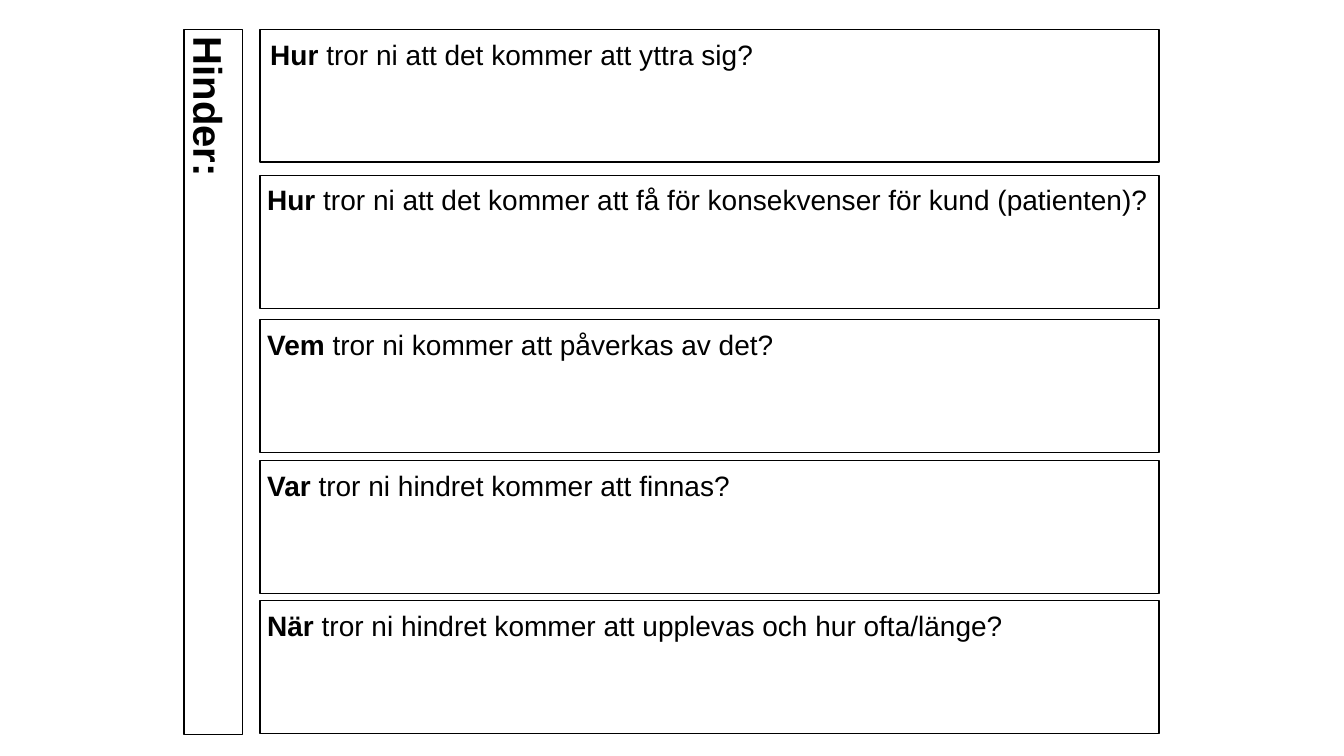
from lxml.etree import SubElement
from pptx import Presentation
from pptx.dml.color import RGBColor as RGB
from pptx.enum.shapes import MSO_SHAPE as SHAPE
from pptx.enum.text import MSO_ANCHOR as ANCHOR, MSO_AUTO_SIZE as AUTO, PP_ALIGN as ALIGN
from pptx.oxml.ns import qn
from pptx.util import Pt

INK = {"black": "000000", "white": "FFFFFF"}
LEFT, WIDE, HIGH = 185.8, 642.2, 95
ASKS = [
    (20.9, "Hur", " tror ni att det kommer att yttra sig?"),
    (125.3, "Hur", " tror ni att det kommer att få för konsekvenser för kund (patienten)?"),
    (228.2, "Vem", " tror ni kommer att påverkas av det?"),
    (329, "Var", " tror ni hindret kommer att finnas?"),
    (429.1, "När ", "tror ni hindret kommer att upplevas och hur ofta/länge?"),
]


def color(name):
    """Return a palette color."""
    return RGB.from_string(INK[name])


def frame(shape, x, y, w, h):
    """Place a shape as a white box with a thin black border."""
    shape.left, shape.top, shape.width, shape.height = map(Pt, (x, y, w, h))
    shape.fill.solid()
    shape.fill.fore_color.rgb = color("white")
    shape.line.color.rgb = color("black")
    shape.line.width = Pt(1)


def write(shape, bold, plain="", size=20, inset=(5, 3)):
    """Write a bold lead and a plain rest at the top left of a shape."""
    body = shape.text_frame
    body.word_wrap = True
    body.auto_size = AUTO.NONE
    body.vertical_anchor = ANCHOR.TOP
    body.margin_left = body.margin_right = Pt(inset[0])
    body.margin_top = body.margin_bottom = Pt(inset[1])
    line = body.paragraphs[0]
    props = line._p.get_or_add_pPr()
    props.set("marL", "0")
    props.set("indent", "0")
    SubElement(props, qn("a:buNone"))
    line.alignment = ALIGN.LEFT
    line.line_spacing = 1.1
    line.space_before = Pt(0)
    for text, heavy in ((bold, True), (plain, False)):
        if text:
            run = line.add_run()
            run.text = text
            run.font.name = "Arial"
            run.font.size = Pt(size)
            run.font.bold = heavy
            run.font.color.rgb = color("black")


def panel(slide, top, bold, plain):
    """Add a question box."""
    box = slide.shapes.add_shape(SHAPE.RECTANGLE, 0, 0, 0, 0)
    box.shadow.inherit = False
    frame(box, LEFT, top, WIDE, HIGH)
    write(box, bold, plain)


def main():
    """Build the slide with obstacle questions."""
    deck = Presentation()
    deck.slide_width, deck.slide_height = Pt(960), Pt(540)
    slide = deck.slides.add_slide(deck.slide_layouts[1])

    title = slide.shapes.title
    frame(title, -99.4, 252, 503.3, 41.8)
    title.rotation = 90
    write(title, "Hinder:", size=28.6)

    first, *rest = ASKS
    top, bold, plain = first
    body = slide.placeholders[1]
    frame(body, LEFT, top, WIDE, HIGH)
    write(body, bold, plain, inset=(7.2, 3.6))
    for ask in rest:
        panel(slide, *ask)
    deck.save("out.pptx")


if __name__ == "__main__":
    main()
